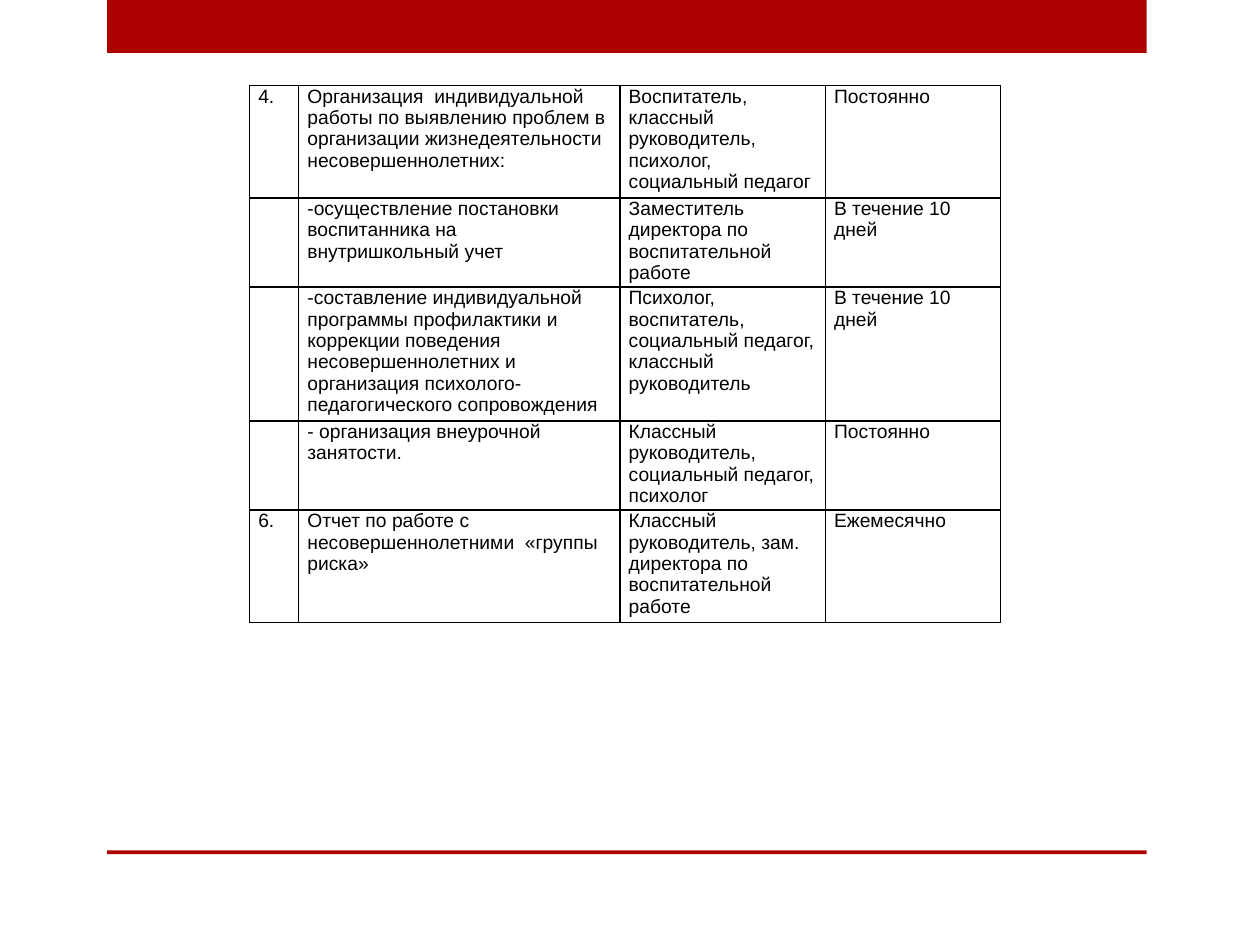
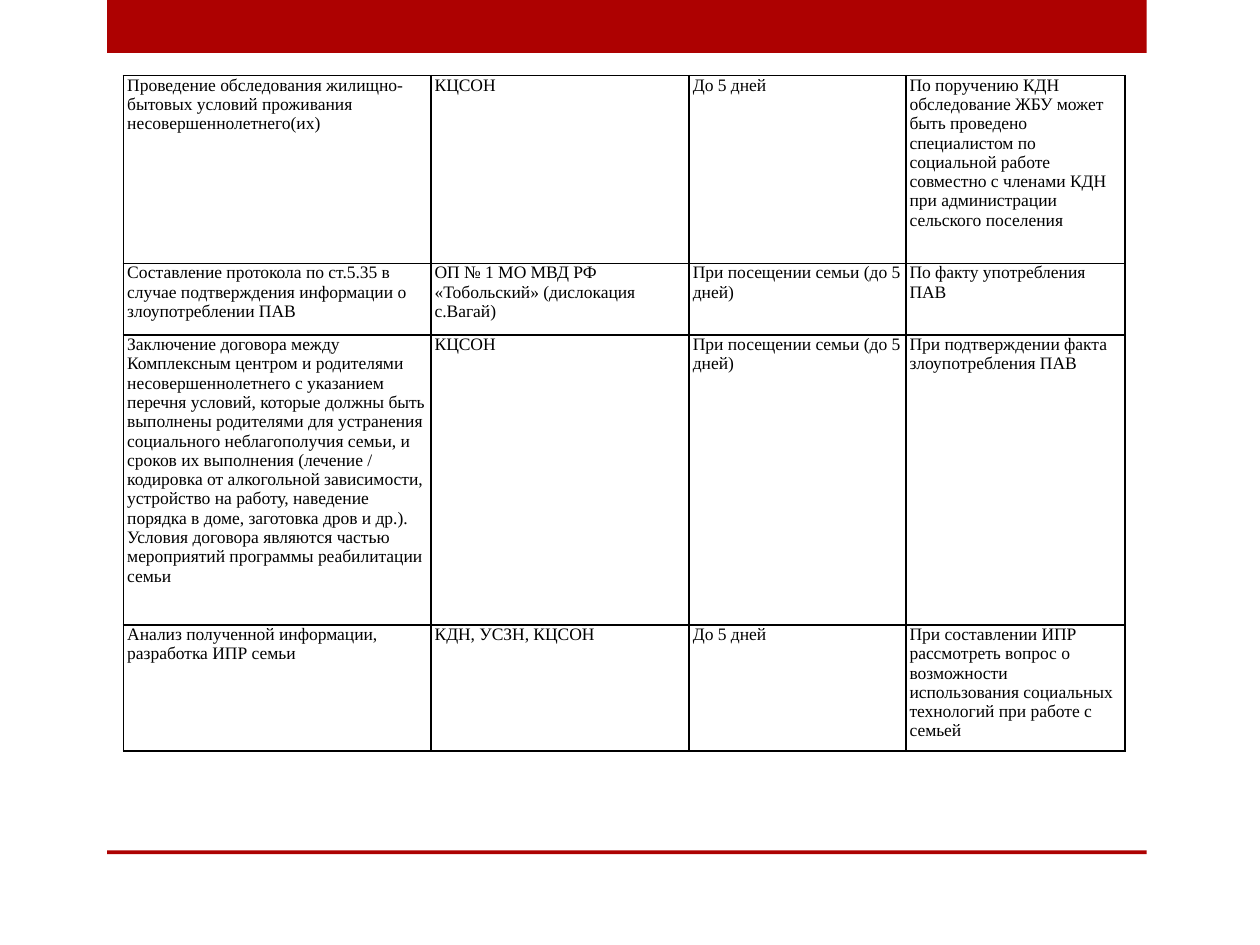
from dataclasses import dataclass

from lxml.etree import SubElement
from pptx import Presentation
from pptx.dml.color import RGBColor
from pptx.enum.shapes import MSO_SHAPE
from pptx.oxml import parse_xml
from pptx.oxml.ns import nsdecls, qn
from pptx.util import Inches, Pt


@dataclass(frozen=True)
class Theme:
    band: str = "AD0101"
    ink: str = "000000"
    border_width: float = 1
    plan_font: str = "Arial"
    plan_size: float = 11
    family_font: str = "Times New Roman"
    family_size: float = 10


THEME = Theme()
BAND_LEFT, BAND_WIDTH = 0.85, 8.25
BANDS = ((0, 0.42), (6.75, 0.03))  # top, height

PLAN_COLUMNS = (0.39, 2.55, 1.63, 1.39)
PLAN_HEIGHTS = (0.89, 0.71, 1.06, 0.71, 0.89)
PLAN_ROWS = (
    ("4.",
     "Организация  индивидуальной работы по выявлению проблем в организации "
     "жизнедеятельности несовершеннолетних:",
     "Воспитатель, классный руководитель, психолог, социальный педагог",
     "Постоянно"),
    ("",
     "-осуществление постановки воспитанника на внутришкольный учет",
     "Заместитель директора по воспитательной работе",
     "В течение 10 дней"),
    ("",
     "-составление индивидуальной программы профилактики и коррекции поведения "
     "несовершеннолетних и организация психолого-педагогического сопровождения",
     "Психолог, воспитатель, социальный педагог, классный руководитель",
     "В течение 10 дней"),
    ("",
     "- организация внеурочной занятости.",
     "Классный руководитель, социальный педагог, психолог",
     "Постоянно"),
    ("6.",
     "Отчет по работе с несовершеннолетними  «группы риска»",
     "Классный руководитель, зам. директора по воспитательной работе",
     "Ежемесячно"),
)

FAMILY_COLUMNS = (2.44, 2.05, 1.72, 1.74)
FAMILY_HEIGHTS = (1.49, 0.57, 2.3, 1.0)
FAMILY_ROWS = (
    ("Проведение обследования жилищно-бытовых условий проживания "
     "несовершеннолетнего(их)",
     "КЦСОН",
     "До 5 дней",
     "По поручению КДН обследование ЖБУ может быть проведено специалистом по "
     "социальной работе совместно с членами КДН при администрации сельского "
     "поселения"),
    ("Составление протокола по ст.5.35 в случае подтверждения информации о "
     "злоупотреблении ПАВ",
     "ОП № 1 МО МВД РФ «Тобольский» (дислокация с.Вагай)",
     "При посещении семьи (до 5 дней)",
     "По факту употребления ПАВ"),
    ("Заключение договора между Комплексным центром и родителями "
     "несовершеннолетнего с указанием перечня условий, которые должны быть "
     "выполнены родителями для устранения социального неблагополучия семьи, и "
     "сроков их выполнения (лечение / кодировка от алкогольной зависимости, "
     "устройство на работу, наведение порядка в доме, заготовка дров и др.). "
     "Условия договора являются частью мероприятий программы реабилитации семьи",
     "КЦСОН",
     "При посещении семьи (до 5 дней)",
     "При подтверждении факта злоупотребления ПАВ"),
    ("Анализ полученной информации, разработка ИПР семьи",
     "КДН, УСЗН, КЦСОН",
     "До 5 дней",
     "При составлении ИПР рассмотреть вопрос о возможности использования "
     "социальных технологий при работе с семьей"),
)


def add_master_bands(master, slide):
    """Draw the bands on the slide, then move them to the master."""
    for top, height in BANDS:
        band = slide.shapes.add_shape(
            MSO_SHAPE.RECTANGLE, Inches(BAND_LEFT), Inches(top),
            Inches(BAND_WIDTH), Inches(height))
        band.shadow.inherit = False
        band.fill.solid()
        band.fill.fore_color.rgb = RGBColor.from_string(THEME.band)
        band.line.fill.background()
        master.element.cSld.spTree.append(band.element)


def set_borders(cell):
    properties = cell._tc.get_or_add_tcPr()
    for position, side in enumerate(("lnL", "lnR", "lnT", "lnB")):
        border = parse_xml(
            f'<a:{side} {nsdecls("a")} w="{Pt(THEME.border_width)}"/>')
        fill = SubElement(border, qn("a:solidFill"))
        SubElement(fill, qn("a:srgbClr"), val=THEME.ink)
        properties.insert(position, border)


def fill_cell(cell, text, font, size, inset):
    cell.margin_left = cell.margin_right = Inches(inset)
    cell.margin_top = cell.margin_bottom = 0
    cell.fill.background()
    set_borders(cell)
    if text:
        run = cell.text_frame.paragraphs[0].add_run()
        run.text = text
        run.font.name = font
        run.font.size = Pt(size)
        run.font.color.rgb = RGBColor.from_string(THEME.ink)


def add_grid(slide, left, top, columns, heights, rows, font, size, inset):
    table = slide.shapes.add_table(
        len(rows), len(columns), Inches(left), Inches(top),
        Inches(sum(columns)), Inches(sum(heights))).table
    table.first_row = table.horz_banding = False
    for column, width in zip(table.columns, columns):
        column.width = Inches(width)
    for row, height, texts in zip(table.rows, heights, rows):
        row.height = Inches(height)
        for cell, text in zip(row.cells, texts):
            fill_cell(cell, text, font, size, inset)


def main():
    deck = Presentation()
    deck.slide_width, deck.slide_height = Inches(10), Inches(7.5)
    blank = deck.slide_layouts[6]

    plan = deck.slides.add_slide(blank)
    add_master_bands(deck.slide_master, plan)
    add_grid(plan, 1.98, 0.68, PLAN_COLUMNS, PLAN_HEIGHTS, PLAN_ROWS,
             THEME.plan_font, THEME.plan_size, inset=0.07)

    family = deck.slides.add_slide(blank)
    add_grid(family, 0.98, 0.6, FAMILY_COLUMNS, FAMILY_HEIGHTS, FAMILY_ROWS,
             THEME.family_font, THEME.family_size, inset=0.03)

    deck.save("out.pptx")


if __name__ == "__main__":
    main()
